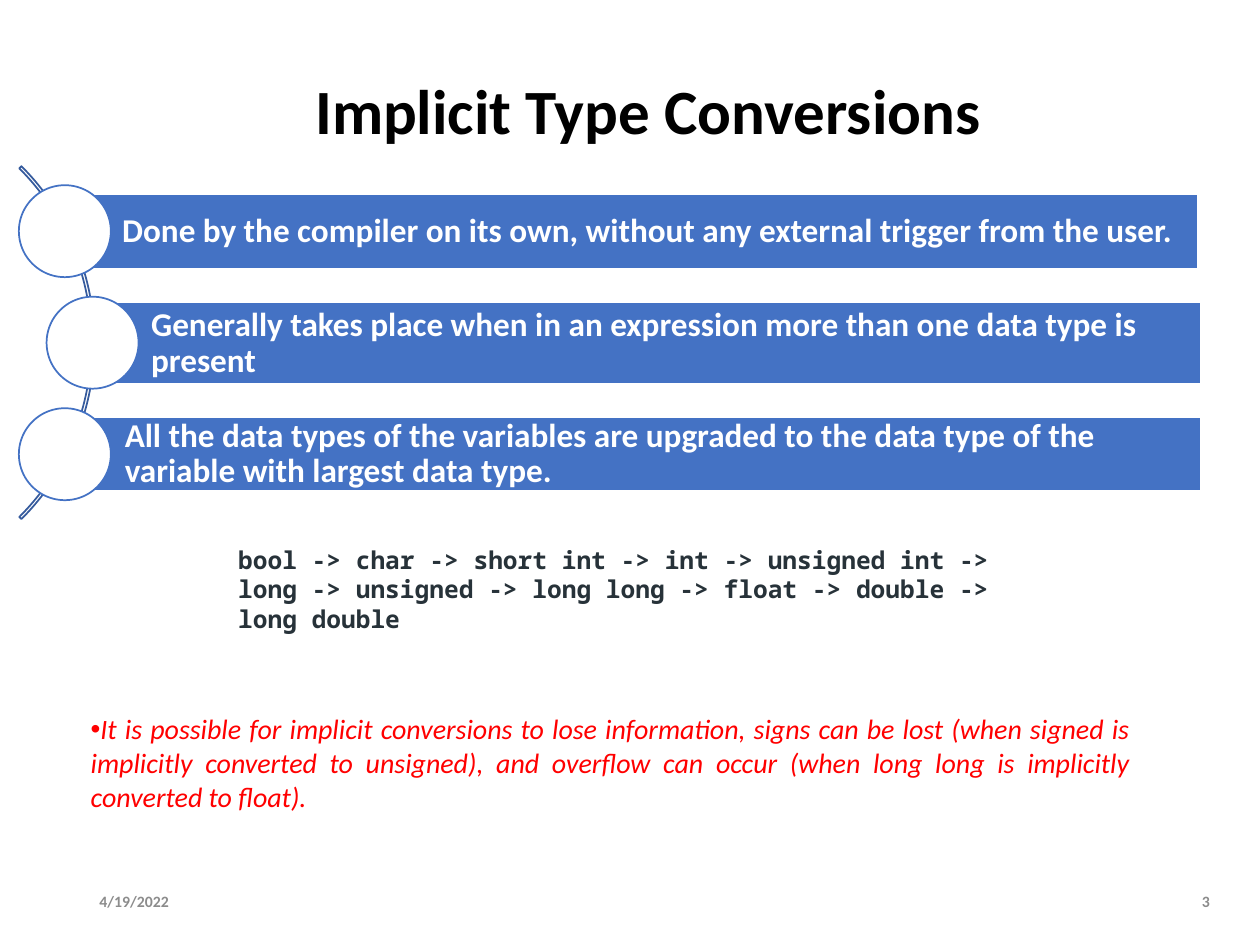
from typing import NamedTuple

from lxml.etree import SubElement
from pptx import Presentation
from pptx.dml.color import RGBColor
from pptx.enum.shapes import MSO_SHAPE
from pptx.enum.text import MSO_ANCHOR, MSO_AUTO_SIZE, PP_ALIGN
from pptx.oxml.ns import qn
from pptx.util import Emu, Inches, Pt

COLUMNS, ROWS = 100, 75
SLIDE_WIDTH, SLIDE_HEIGHT = Inches(10), Inches(7.5)
BLUE, DARK_BLUE, WHITE, GREY = "4472C4", "365B9D", "FFFFFF", "8C8C8C"
CIRCLE_SIZE, CIRCLE_TOP, CIRCLE_STEP = 7.3, 14.7, 8.85


class Box(NamedTuple):
    """A place on the slide grid, in columns and rows."""
    left: float
    top: float
    width: float
    height: float


class Style(NamedTuple):
    size: float
    color: str
    bold: bool = True
    italic: bool = False
    font: str = "Calibri"
    align: PP_ALIGN = PP_ALIGN.LEFT
    line_spacing: float = 1.0


class Point(NamedTuple):
    text: str
    bar: Box
    circle_left: float


POINTS = [
    Point("Done by the compiler on its own, without any external trigger from the user.",
          Box(5, 15.4, 90.1, 5.9), 1.5),
    Point("Generally takes place when in an expression more than one data type is present",
          Box(7.3, 24, 88, 6.5), 3.7),
    Point("All the data types of the variables are upgraded to the data type of the "
          "variable with largest data type.",
          Box(5.2, 33.1, 90.1, 5.9), 1.5),
]


def rgb(color: str) -> RGBColor:
    return RGBColor.from_string(color)


def across(columns: float) -> Emu:
    return Emu(round(SLIDE_WIDTH * columns / COLUMNS))


def down(rows: float) -> Emu:
    return Emu(round(SLIDE_HEIGHT * rows / ROWS))


def place(box: Box) -> tuple[Emu, Emu, Emu, Emu]:
    return across(box.left), down(box.top), across(box.width), down(box.height)


def move(shape, box: Box) -> None:
    shape.left, shape.top, shape.width, shape.height = place(box)


def write(shape, text: str, style: Style, anchor=MSO_ANCHOR.MIDDLE, bullet: str = "") -> None:
    frame = shape.text_frame
    frame.text = text
    frame.word_wrap = True
    frame.auto_size = MSO_AUTO_SIZE.NONE
    frame.vertical_anchor = anchor
    paragraph = frame.paragraphs[0]
    if bullet:
        properties = paragraph._p.get_or_add_pPr()
        properties.set("marL", "0")
        properties.set("indent", "0")
        SubElement(properties, qn("a:buChar"), char=bullet)
    paragraph.alignment = style.align
    paragraph.line_spacing = style.line_spacing
    paragraph.space_before = Pt(0)
    font = paragraph.font
    font.name, font.size = style.font, Pt(style.size)
    font.bold, font.italic = style.bold, style.italic
    font.color.rgb = rgb(style.color)


def set_insets(shape, left: float, others: float) -> None:
    frame = shape.text_frame
    frame.margin_left = Inches(left)
    frame.margin_top = frame.margin_right = frame.margin_bottom = Inches(others)


def add_shape(slide, kind: MSO_SHAPE, box: Box, fill: str, line: str):
    shape = slide.shapes.add_shape(kind, *place(box))
    shape.shadow.inherit = False
    shape.fill.solid()
    shape.fill.fore_color.rgb = rgb(fill)
    shape.line.color.rgb = rgb(line)
    shape.line.width = Pt(1)
    return shape


def add_text(slide, box: Box, text: str, style: Style):
    shape = slide.shapes.add_textbox(*place(box))
    write(shape, text, style)
    return shape


def add_arc(slide) -> None:
    arc = add_shape(slide, MSO_SHAPE.BLOCK_ARC, Box(-32.1, 7.4, 39.6, 39.6), WHITE, DARK_BLUE)
    arc.fill.background()
    for index, value in enumerate((189, 27, 0.006)):
        arc.adjustments[index] = value


def add_point(slide, point: Point, row: int) -> None:
    bar = add_shape(slide, MSO_SHAPE.RECTANGLE, point.bar, BLUE, WHITE)
    write(bar, point.text, Style(19, WHITE, line_spacing=0.9))
    set_insets(bar, 0.47, 0.05)
    circle = Box(point.circle_left, CIRCLE_TOP + row * CIRCLE_STEP, CIRCLE_SIZE, CIRCLE_SIZE)
    add_shape(slide, MSO_SHAPE.OVAL, circle, WHITE, BLUE)


def main() -> None:
    presentation = Presentation()
    presentation.slide_width, presentation.slide_height = SLIDE_WIDTH, SLIDE_HEIGHT
    slide = presentation.slides.add_slide(presentation.slide_layouts[1])
    title, body = slide.placeholders

    move(title, Box(6.9, 5.6, 90.2, 6.9))
    write(title, "Implicit Type Conversions ",
          Style(36, "000000", align=PP_ALIGN.CENTER, line_spacing=0.9))

    add_arc(slide)
    for row, point in enumerate(POINTS):
        add_point(slide, point, row)

    order = add_text(slide, Box(18.9, 44.4, 63.5, 4.7),
                     "bool -> char -> short int -> int -> unsigned int -> long -> unsigned -> "
                     "long long -> float -> double -> long double",
                     Style(14, "273239", font="Noto Sans Mono"))
    set_insets(order, 0, 0)

    move(body, Box(6.2, 56, 84.5, 9.1))
    write(body,
          "It is possible for implicit conversions to lose information, signs can be lost "
          "(when signed is implicitly converted to unsigned), and overflow can occur "
          "(when long long is implicitly converted to float).",
          Style(16, "FF0000", bold=False, italic=True, align=PP_ALIGN.JUSTIFY),
          MSO_ANCHOR.TOP, bullet="•")

    add_text(slide, Box(6.9, 69.5, 9.5, 4), "4/19/2022", Style(9, GREY))
    add_text(slide, Box(93.1, 69.5, 3.9, 4), "3", Style(9, GREY, align=PP_ALIGN.RIGHT))
    presentation.save("out.pptx")


if __name__ == "__main__":
    main()
